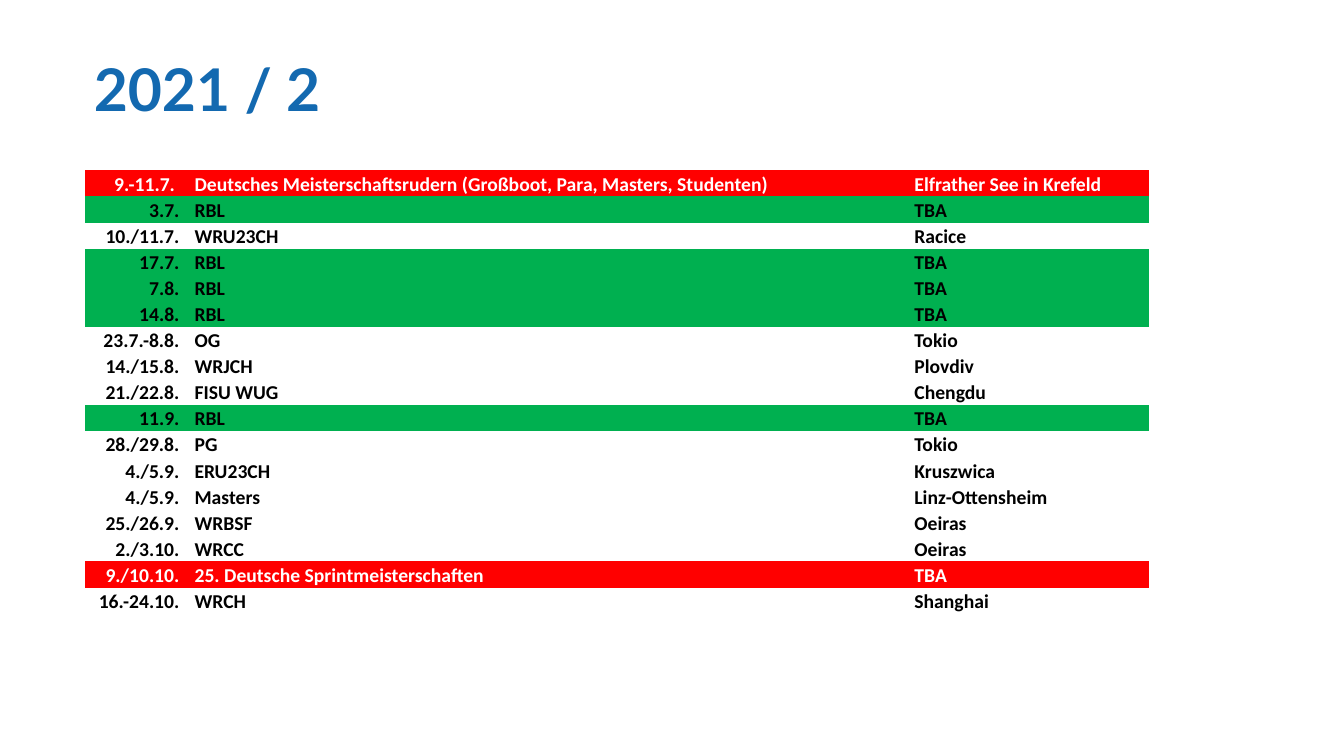
import pptx
import pptx.dml.color
import pptx.enum.text
import pptx.oxml.ns
import pptx.util
from lxml import etree

Inches, Pt, qn = pptx.util.Inches, pptx.util.Pt, pptx.oxml.ns.qn
PP_ALIGN = pptx.enum.text.PP_ALIGN
MSO_ANCHOR = pptx.enum.text.MSO_ANCHOR

BLACK, WHITE, RED, GREEN, BLUE = "000000", "FFFFFF", "FF0000", "00B050", "1369B0"
NO_STYLE_NO_GRID = "{2D5ABB26-0587-4C30-8999-92F81FD0307C}"

# Date, event, place, row fill
EVENTS = [
    ("9.-11.7. ", "Deutsches Meisterschaftsrudern (Großboot, Para, Masters, Studenten)",
     "Elfrather See in Krefeld", RED),
    ("3.7.", "RBL", "TBA", GREEN),
    ("10./11.7.", "WRU23CH", "Racice", None),
    ("17.7.", "RBL", "TBA", GREEN),
    ("7.8.", "RBL", "TBA", GREEN),
    ("14.8.", "RBL", "TBA", GREEN),
    ("23.7.-8.8.", "OG", "Tokio", None),
    ("14./15.8.", "WRJCH", "Plovdiv", None),
    ("21./22.8.", "FISU WUG", "Chengdu", None),
    ("11.9.", "RBL", "TBA", GREEN),
    ("28./29.8.", "PG", "Tokio", None),
    ("4./5.9.", "ERU23CH", "Kruszwica", None),
    ("4./5.9.", "Masters", "Linz-Ottensheim", None),
    ("25./26.9.", "WRBSF", "Oeiras", None),
    ("2./3.10.", "WRCC", "Oeiras", None),
    ("9./10.10.", "25. Deutsche Sprintmeisterschaften", "TBA", RED),
    ("16.-24.10.", "WRCH", "Shanghai", None),
]
COL_WIDTHS = [0.95, 0.13, 7.14, 2.34]  # date, gap, event, place
TABLE_HEIGHT = 4.4


def rgb(color):
    return pptx.dml.color.RGBColor.from_string(color)


def add_run(p, text, font, size, color):
    r = p.add_run()
    r.text = text
    r.font.name, r.font.size, r.font.bold = font, Pt(size), True
    r.font.color.rgb = rgb(color)


prs = pptx.Presentation()
prs.slide_width, prs.slide_height = Inches(13.33), Inches(7.5)
s = prs.slides.add_slide(prs.slide_layouts[5])

# Title
title = s.shapes.title
title.left, title.top = Inches(0.83), Inches(0.36)
title.width, title.height = Inches(9.73), Inches(1.12)
tf = title.text_frame
tf.auto_size = pptx.enum.text.MSO_AUTO_SIZE.NONE
tf.vertical_anchor = MSO_ANCHOR.MIDDLE
p = tf.paragraphs[0]
p.alignment = PP_ALIGN.LEFT
p.line_spacing = 0.9
add_run(p, "2021 / 2", "Lato", 42, BLUE)

# Calendar table
frame = s.shapes.add_table(len(EVENTS), len(COL_WIDTHS), Inches(0.84), Inches(1.69),
                           Inches(sum(COL_WIDTHS)), Inches(TABLE_HEIGHT))
table = frame.table
table.first_row = table.horz_banding = False
table._tbl.tblPr.find(qn("a:tableStyleId")).text = NO_STYLE_NO_GRID
for column, width in zip(table.columns, COL_WIDTHS):
    column.width = Inches(width)

for row, (date, event, place, fill) in zip(table.rows, EVENTS):
    row.height = Inches(TABLE_HEIGHT / len(EVENTS))
    for col, (cell, text) in enumerate(zip(row.cells, (date, "", event, place))):
        cell.margin_left = cell.margin_right = cell.margin_top = Inches(0.01)
        cell.margin_bottom = 0
        cell.vertical_anchor = MSO_ANCHOR.BOTTOM
        if fill:
            cell.fill.solid()
            cell.fill.fore_color.rgb = rgb(fill)
        else:
            cell.fill.background()
        p = cell.text_frame.paragraphs[0]
        p.alignment = PP_ALIGN.RIGHT if col == 0 else PP_ALIGN.LEFT
        if text:
            add_run(p, text, "Calibri", 14, WHITE if fill == RED else BLACK)
        else:
            # A small end mark keeps the empty gap cell from stretching the row
            etree.SubElement(p._p, qn("a:endParaRPr"), sz="1400")

prs.save("out.pptx")
